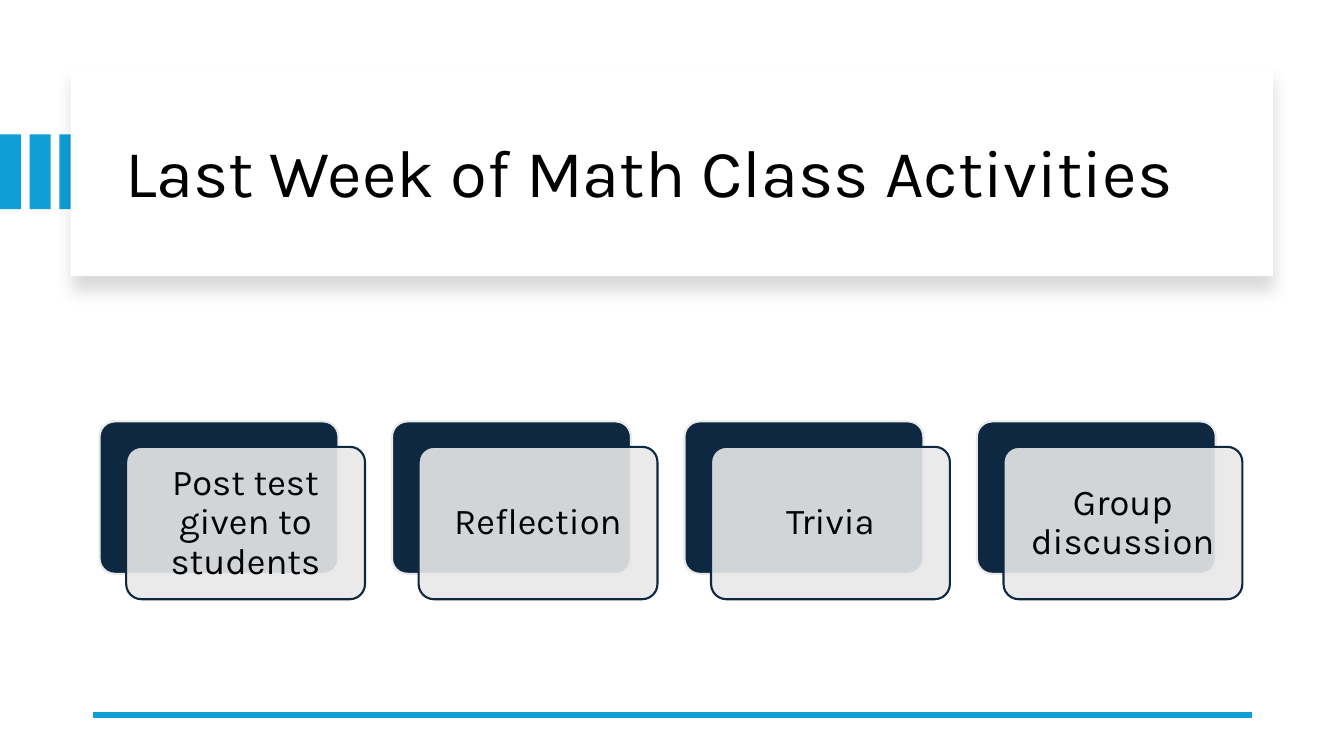
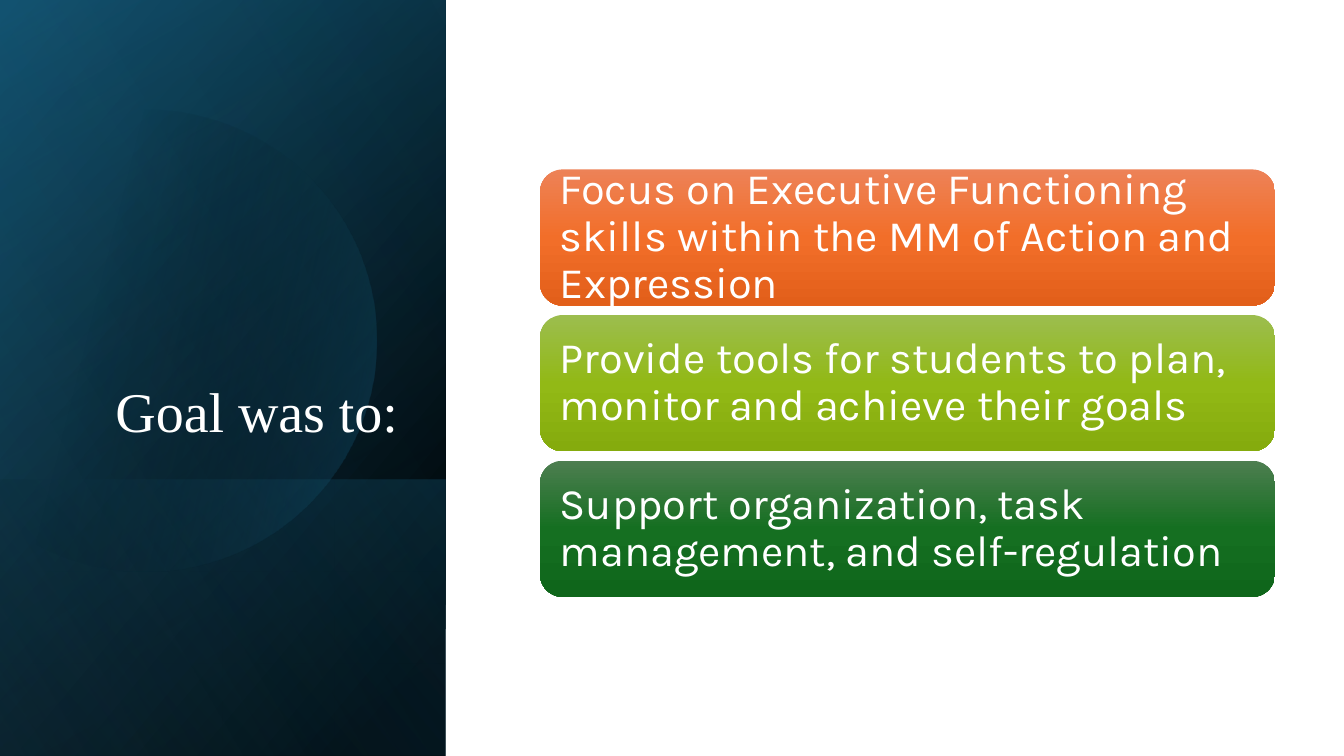
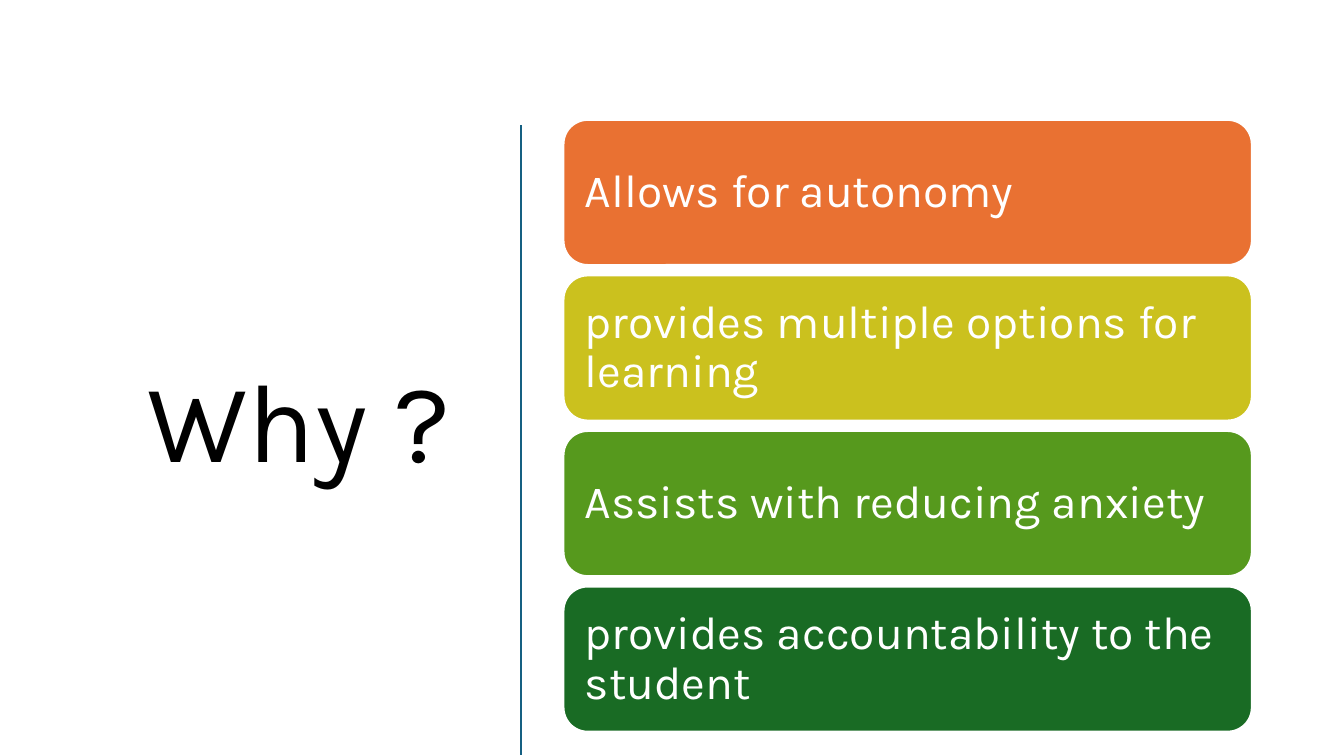
"""Build three slides about the last week of math class."""
from math import acos, cos, sin

from lxml.etree import SubElement
from pptx import Presentation
from pptx.dml.color import RGBColor
from pptx.enum.shapes import MSO_CONNECTOR, MSO_SHAPE
from pptx.enum.text import MSO_ANCHOR, MSO_AUTO_SIZE, PP_ALIGN
from pptx.oxml.ns import qn
from pptx.util import Cm, Pt

BLACK = RGBColor(0x00, 0x00, 0x00)
WHITE = RGBColor(0xFF, 0xFF, 0xFF)
GRAY = RGBColor(0xE8, 0xE8, 0xE8)
NAVY = RGBColor(0x0E, 0x28, 0x41)
DEEP_BLUE = RGBColor(0x10, 0x48, 0x62)
TEAL = RGBColor(0x15, 0x60, 0x82)
BLUE = RGBColor(0x0F, 0x9E, 0xD5)
SKY = RGBColor(0x46, 0xB1, 0xE1)
ORANGE = RGBColor(0xE9, 0x71, 0x32)
YELLOW = RGBColor(0xCB, 0xC1, 0x1E)
GREEN = RGBColor(0x56, 0x99, 0x1D)
DARK_GREEN = RGBColor(0x19, 0x6B, 0x24)
ORANGE_SHADES = (RGBColor(0xED, 0x82, 0x57), RGBColor(0xF2, 0x6E, 0x29), RGBColor(0xE2, 0x5F, 0x1A))
LIME_SHADES = (RGBColor(0x9C, 0xBD, 0x4E), RGBColor(0x92, 0xB9, 0x16), RGBColor(0x85, 0xAB, 0x0D))
GREEN_SHADES = (RGBColor(0x4D, 0x7E, 0x50), RGBColor(0x15, 0x6F, 0x21), RGBColor(0x0F, 0x66, 0x1B))
BODY_FONT = "Karla"


def add_box(slide, preset, box, color, line_color=None):
    shape = slide.shapes.add_shape(preset, *[Cm(length) for length in box])
    shape.shadow.inherit = False
    shape.fill.solid()
    shape.fill.fore_color.rgb = color
    if line_color is None:
        shape.line.fill.background()
    else:
        shape.line.color.rgb = line_color
        shape.line.width = Pt(1.5)
    return shape


def fill_gradient(shape, stops, angle):
    properties = shape.element.spPr
    solid = properties.find(qn("a:solidFill"))
    gradient = properties.makeelement(qn("a:gradFill"), {"rotWithShape": "1"})
    properties.replace(solid, gradient)
    stop_list = SubElement(gradient, qn("a:gsLst"))
    for position, color, opacity in stops:
        stop = SubElement(stop_list, qn("a:gs"), pos=str(position * 1000))
        color_element = SubElement(stop, qn("a:srgbClr"), val=str(color))
        if opacity < 100:
            SubElement(color_element, qn("a:alpha"), val=str(opacity * 1000))
    SubElement(gradient, qn("a:lin"), ang=str(angle * 60000), scaled="0")


presentation = Presentation()
presentation.slide_width = Cm(33.87)
presentation.slide_height = Cm(19.05)
title_only = presentation.slide_layouts[5]
activities, goals, reasons = [presentation.slides.add_slide(title_only) for _ in range(3)]
texts = []

for index in range(3):
    add_box(activities, MSO_SHAPE.RECTANGLE, (0.75 * index, 3.39, 0.53, 1.88), BLUE)
title_card = add_box(activities, MSO_SHAPE.RECTANGLE, (1.78, 1.7, 30.3, 5.26), WHITE)
effects = title_card.element.spPr.find(qn("a:effectLst"))
shadow = SubElement(effects, qn("a:outerShdw"), blurRad=str(Pt(11)), dist=str(Pt(10)), dir="5400000")
shadow_color = SubElement(shadow, qn("a:srgbClr"), val=str(BLACK))
SubElement(shadow_color, qn("a:alpha"), val="15000")

card_style = {"size": Pt(26), "color": BLACK, "align": PP_ALIGN.CENTER, "inset": Cm(0.28)}
for index, text in enumerate(["Post test given to students", "Reflection", "Trivia", "Group discussion"]):
    left = 2.51 + 7.37 * index
    back = add_box(activities, MSO_SHAPE.ROUNDED_RECTANGLE, (left, 10.62, 6.02, 3.84), NAVY, GRAY)
    front = add_box(activities, MSO_SHAPE.ROUNDED_RECTANGLE, (left + 0.67, 11.26, 6.02, 3.84), GRAY, NAVY)
    back.adjustments[0] = front.adjustments[0] = 0.1
    front_color = front.element.spPr.find(qn("a:solidFill")).find(qn("a:srgbClr"))
    SubElement(front_color, qn("a:alpha"), val="90000")
    texts.append((front, text, card_style))

panel = (0, 0, 11.23, 19.05)
lower_panel = (0, 12.09, 11.23, 6.96)
base_layers = [
    (panel, [(8, BLACK, 100), (100, DEEP_BLUE, 100)], 220),
    (panel, [(0, BLACK, 0), (99, TEAL, 46)], 240),
    (lower_panel, [(2, TEAL, 29), (100, BLACK, 30)], 140),
]
for box, stops, angle in base_layers:
    fill_gradient(add_box(goals, MSO_SHAPE.RECTANGLE, box, BLACK), stops, angle)

center_x, center_y, radius = 3.66, 8.59, 5.82
half_sweep = acos(-center_x / radius)
angles = [half_sweep * (step / 60 - 1) for step in range(121)]
points = [(Cm(center_x + radius * cos(angle)), Cm(center_y + radius * sin(angle))) for angle in angles]
builder = goals.shapes.build_freeform(*points[0])
builder.add_line_segments(points[1:], close=True)
disc = builder.convert_to_shape()
disc.shadow.inherit = False
disc.line.fill.background()
disc.fill.solid()
disc.fill.fore_color.rgb = TEAL
fill_gradient(disc, [(29, BLACK, 0), (100, TEAL, 43)], 14)
glow = add_box(goals, MSO_SHAPE.RECTANGLE, panel, SKY)
fill_gradient(glow, [(0, BLACK, 0), (99, SKY, 11)], 150)

goal_style = {"size": Pt(31), "color": WHITE, "align": PP_ALIGN.LEFT, "inset": Cm(0.33)}
goal_rows = [
    ("Focus on Executive Functioning skills within the MM of Action and Expression", ORANGE_SHADES),
    ("Provide tools for students to plan, monitor and achieve their goals", LIME_SHADES),
    ("Support organization, task management, and self-regulation", GREEN_SHADES),
]
for index, (text, shades) in enumerate(goal_rows):
    box = (13.61, 4.27 + 3.67 * index, 18.52, 3.43)
    row = add_box(goals, MSO_SHAPE.ROUNDED_RECTANGLE, box, shades[1])
    fill_gradient(row, [(50 * place, shade, 100) for place, shade in enumerate(shades)], 90)
    texts.append((row, text, goal_style))

reason_style = {"size": Pt(33), "color": WHITE, "align": PP_ALIGN.LEFT, "inset": Cm(0.36)}
reason_rows = [
    ("Allows for autonomy", ORANGE),
    ("provides multiple options for learning", YELLOW),
    ("Assists with reducing anxiety", GREEN),
    ("provides accountability to the student", DARK_GREEN),
]
for index, (text, color) in enumerate(reason_rows):
    box = (14.2, 3.02 + 3.92 * index, 17.35, 3.66)
    row = add_box(reasons, MSO_SHAPE.ROUNDED_RECTANGLE, box, color, WHITE)
    texts.append((row, text, reason_style))

rules = [
    (activities, (2.34, 18.01, 31.55, 18.01), BLUE, 4.5),
    (reasons, (13.13, 3.15, 13.13, 19.02), TEAL, 2),
]
for slide, ends, color, width in rules:
    rule = slide.shapes.add_connector(MSO_CONNECTOR.STRAIGHT, *[Cm(length) for length in ends])
    rule.line.color.rgb = color
    rule.line.width = Pt(width)
    SubElement(rule.element.spPr, qn("a:effectLst"))

titles = [
    (activities, "Last Week of Math Class Activities", (2.9, 2.26, 28.27, 4.32),
     {"size": Pt(48), "color": BLACK, "align": PP_ALIGN.LEFT}),
    (goals, "Goal was to:", (1.63, 4.67, 8.66, 6.65),
     {"size": Pt(40), "color": WHITE, "align": PP_ALIGN.RIGHT,
      "font": "Times New Roman", "anchor": MSO_ANCHOR.BOTTOM}),
    (reasons, "Why ? ", (1.32, 2.97, 10.95, 15.52),
     {"size": Pt(80), "color": BLACK, "align": PP_ALIGN.RIGHT}),
]
for slide, text, box, style in titles:
    title = slide.shapes.title
    for name, length in zip(("left", "top", "width", "height"), box):
        setattr(title, name, Cm(length))
    title.element.getparent().append(title.element)
    texts.append((title, text, style))

for shape, text, style in texts:
    frame = shape.text_frame
    frame.text = text
    frame_format = {
        "word_wrap": True,
        "auto_size": MSO_AUTO_SIZE.NONE,
        "vertical_anchor": style.get("anchor", MSO_ANCHOR.MIDDLE),
    }
    if "inset" in style:
        for side in ("left", "top", "right", "bottom"):
            frame_format[f"margin_{side}"] = style["inset"]
    for name, value in frame_format.items():
        setattr(frame, name, value)
    paragraph = frame.paragraphs[0]
    paragraph.alignment = style["align"]
    paragraph.line_spacing = 0.9
    font = paragraph.runs[0].font
    for name, value in {"name": style.get("font", BODY_FONT), "size": style["size"]}.items():
        setattr(font, name, value)
    font.color.rgb = style["color"]

presentation.save("out.pptx")
